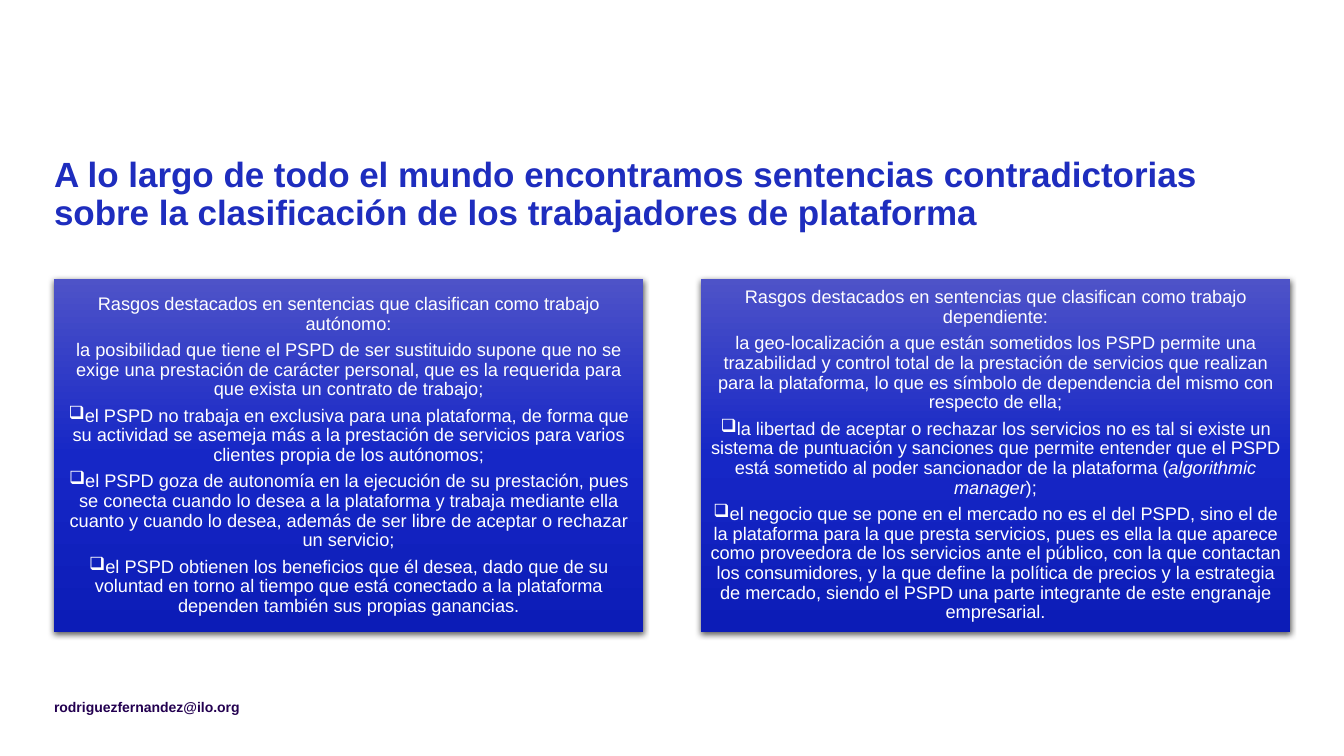
"""Build a slide comparing court rulings on the status of platform workers."""
from copy import deepcopy

from lxml import etree
from pptx import Presentation
from pptx.dml.color import RGBColor
from pptx.enum.shapes import MSO_SHAPE
from pptx.enum.text import MSO_ANCHOR, MSO_AUTO_SIZE, PP_ALIGN
from pptx.oxml.ns import qn
from pptx.util import Emu, Pt

RECTANGLE = MSO_SHAPE.RECTANGLE
TOP, MIDDLE = MSO_ANCHOR.TOP, MSO_ANCHOR.MIDDLE
LEFT, CENTER = PP_ALIGN.LEFT, PP_ALIGN.CENTER
NO_AUTOFIT = MSO_AUTO_SIZE.NONE

TITLE = (
    "A lo largo de todo el mundo encontramos sentencias contradictorias "
    "sobre la clasificación de los trabajadores de plataforma"
)
EMAIL = "rodriguezfernandez@ilo.org"
ITALIC_TERM = "algorithmic manager"
PANELS = [
    {
        "plain": [
            "Rasgos destacados en sentencias que clasifican como trabajo autónomo:",
            "la posibilidad que tiene el PSPD de ser sustituido supone que no se exige una "
            "prestación de carácter personal, que es la requerida para que exista un "
            "contrato de trabajo;",
        ],
        "bulleted": [
            "el PSPD no trabaja en exclusiva para una plataforma, de forma que su actividad "
            "se asemeja más a la prestación de servicios para varios clientes propia de los "
            "autónomos;",
            "el PSPD goza de autonomía en la ejecución de su prestación, pues se conecta "
            "cuando lo desea a la plataforma y trabaja mediante ella cuanto y cuando lo "
            "desea, además de ser libre de aceptar o rechazar un servicio;",
            "el PSPD obtienen los beneficios que él desea, dado que de su voluntad en torno "
            "al tiempo que está conectado a la plataforma dependen también sus propias "
            "ganancias.",
        ],
    },
    {
        "plain": [
            "Rasgos destacados en sentencias que clasifican como trabajo dependiente:",
            "la geo-localización a que están sometidos los PSPD permite una trazabilidad y "
            "control total de la prestación de servicios que realizan para la plataforma, "
            "lo que es símbolo de dependencia del mismo con respecto de ella;",
        ],
        "bulleted": [
            "la libertad de aceptar o rechazar los servicios no es tal si existe un sistema "
            "de puntuación y sanciones que permite entender que el PSPD está sometido al "
            "poder sancionador de la plataforma (algorithmic manager);",
            "el negocio que se pone en el mercado no es el del PSPD, sino el de la "
            "plataforma para la que presta servicios, pues es ella la que aparece como "
            "proveedora de los servicios ante el público, con la que contactan los "
            "consumidores, y la que define la política de precios y la estrategia de "
            "mercado, siendo el PSPD una parte integrante de este engranaje empresarial.",
        ],
    },
]

COLORS = {
    "title": "1E2DBE",
    "email": "230050",
    "panel_text": "FFFFFF",
    "shadow": "000000",
}
GRADIENT = [(0, "4E53C8"), (0.5, "1627C6"), (1, "0C1CB7")]
FONT = "Arial"
PX = 914400 / 100.8
MARGIN, CONTENT_WIDTH = 54, 1236
PANEL_TOP, PANEL_WIDTH, PANEL_HEIGHT, PANEL_PADDING = 279, 589, 353, 5


def px(*lengths):
    return [Emu(round(length * PX)) for length in lengths]


def set_frame(frame, padding, anchor):
    frame.word_wrap = True
    frame.auto_size = NO_AUTOFIT
    frame.vertical_anchor = anchor
    inset, = px(padding)
    frame.margin_left = frame.margin_right = inset
    frame.margin_top = frame.margin_bottom = inset


def style_runs(paragraph, size, color, bold=False):
    for run in paragraph.runs:
        run.font.name = FONT
        run.font.size = Pt(size)
        run.font.bold = bold
        run.font.color.rgb = RGBColor.from_string(color)


def fill_gradient(shape):
    shape.fill.gradient()
    shape.fill.gradient_angle = 270
    first = shape.fill.gradient_stops[0]._gs
    first.addnext(deepcopy(first))
    for stop, (position, color) in zip(shape.fill.gradient_stops, GRADIENT):
        stop.position = position
        stop.color.rgb = RGBColor.from_string(color)


def add_shadow(shape):
    shape.shadow.inherit = False
    effects = shape._element.spPr.find(qn("a:effectLst"))
    outer = etree.SubElement(
        effects, qn("a:outerShdw"), blurRad=str(Pt(4.5)), dist=str(Pt(1.5)),
        dir="5400000", algn="ctr", rotWithShape="0",
    )
    color = etree.SubElement(outer, qn("a:srgbClr"), val=COLORS["shadow"])
    etree.SubElement(color, qn("a:alpha"), val="63000")


def add_bullet(paragraph):
    properties = paragraph._p.get_or_add_pPr()
    properties.set("marL", "0")
    properties.set("indent", "0")
    etree.SubElement(properties, qn("a:buChar"), char="❑")


def add_panel(slide, left, content):
    shape = slide.shapes.add_shape(
        RECTANGLE, *px(left, PANEL_TOP, PANEL_WIDTH, PANEL_HEIGHT))
    fill_gradient(shape)
    shape.line.fill.background()
    add_shadow(shape)
    frame = shape.text_frame
    set_frame(frame, PANEL_PADDING, MIDDLE)
    texts = content["plain"] + content["bulleted"]
    for index, text in enumerate(texts):
        paragraph = frame.paragraphs[0] if index == 0 else frame.add_paragraph()
        paragraph.alignment = CENTER
        paragraph.line_spacing = 0.9
        paragraph.space_after = Pt(4.7)
        if index >= len(content["plain"]):
            add_bullet(paragraph)
        for part in text.partition(ITALIC_TERM):
            if part:
                run = paragraph.add_run()
                run.text = part
                run.font.italic = part == ITALIC_TERM
        style_runs(paragraph, 13, COLORS["panel_text"])


def main():
    presentation = Presentation()
    presentation.slide_width, presentation.slide_height = px(1344, 756)
    slide = presentation.slides.add_slide(presentation.slide_layouts[5])

    title = slide.shapes.title
    title.left, title.top, title.width, title.height = px(MARGIN, 157, CONTENT_WIDTH, 80)
    title.text_frame.text = TITLE
    set_frame(title.text_frame, 0, TOP)
    heading = title.text_frame.paragraphs[0]
    heading.alignment = LEFT
    heading.line_spacing = 0.9
    style_runs(heading, 25, COLORS["title"], bold=True)

    email = slide.shapes.add_textbox(*px(MARGIN, 699, CONTENT_WIDTH // 2, 20))
    email.text_frame.text = EMAIL
    set_frame(email.text_frame, 0, TOP)
    style_runs(email.text_frame.paragraphs[0], 10, COLORS["email"], bold=True)

    step = (CONTENT_WIDTH - PANEL_WIDTH) // (len(PANELS) - 1)
    for index, content in enumerate(PANELS):
        add_panel(slide, MARGIN + index * step, content)

    presentation.save("out.pptx")


if __name__ == "__main__":
    main()
